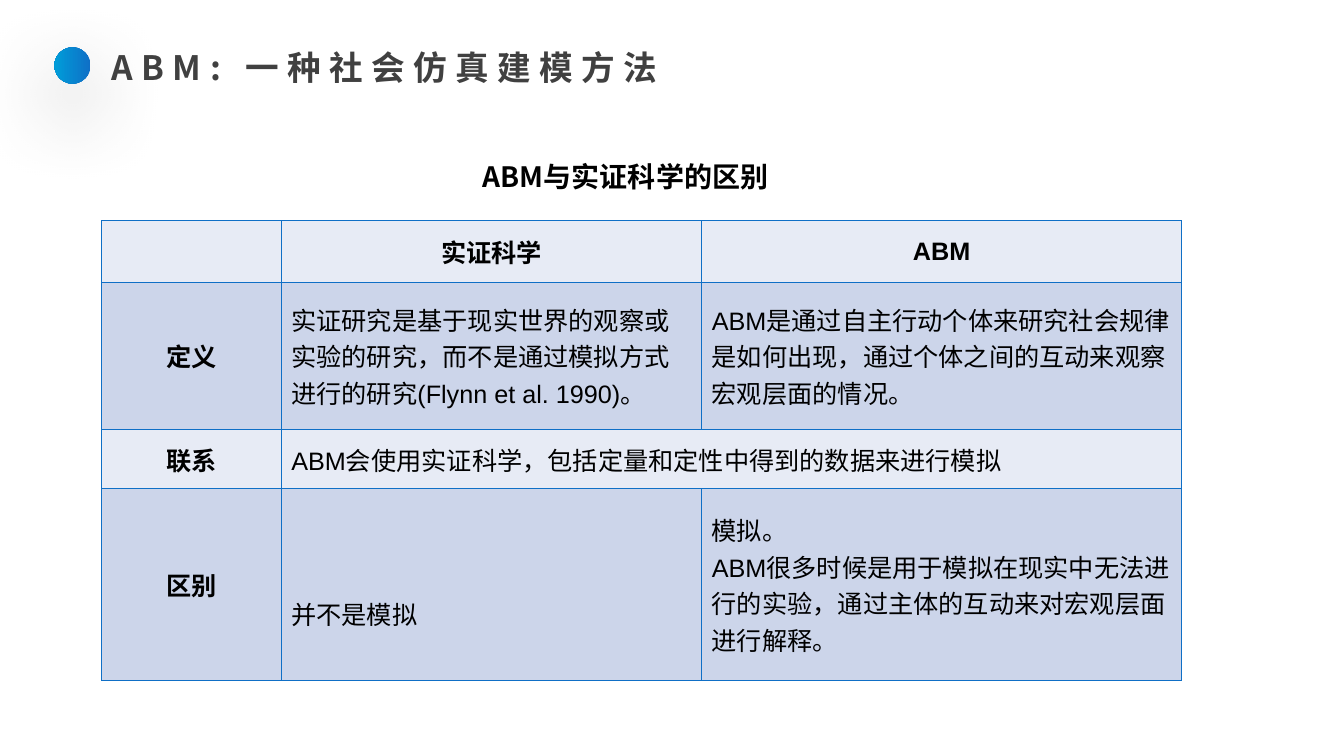
from dataclasses import dataclass
from lxml.etree import SubElement
from pptx import Presentation
from pptx.dml.color import RGBColor
from pptx.enum.shapes import MSO_SHAPE
from pptx.enum.text import MSO_ANCHOR, PP_ALIGN
from pptx.oxml.ns import qn
from pptx.util import Pt

PX = 9144  # EMU per px, 100 px to the inch


@dataclass(frozen=True)
class Theme:
    heading_font: str = "Noto Sans CJK SC"
    table_font: str = "Arial"
    title_size: int = 24
    caption_size: int = 20
    table_size: int = 18
    title: str = "404040"
    text: str = "000000"
    blue: str = "0F6FC6"
    cyan: str = "009DD9"
    bands: tuple = ("E7EBF5", "CCD5EA")


THEME = Theme()
COLUMNS = (178, 417, 476)
ROWS = (61, 146, 59, 190)
CELLS = (
    ("", "实证科学", "ABM"),
    ("定义",
     "实证研究是基于现实世界的观察或实验的研究，而不是通过模拟方式进行的研究(Flynn et al. 1990)。",
     "ABM是通过自主行动个体来研究社会规律是如何出现，通过个体之间的互动来观察宏观层面的情况。"),
    ("联系", "ABM会使用实证科学，包括定量和定性中得到的数据来进行模拟", ""),
    ("区别", "并不是模拟",
     "模拟。\nABM很多时候是用于模拟在现实中无法进行的实验，通过主体的互动来对宏观层面进行解释。"),
)


def emu(*lengths):
    return [length * PX for length in lengths]


def add_span(para, text, font, size, color, bold=True):
    span = para.add_run()
    span.text = text
    for name, value in {"name": font, "size": Pt(size), "bold": bold}.items():
        setattr(span.font, name, value)
    span.font.color.rgb = RGBColor.from_string(color)
    SubElement(span.font._element, qn("a:ea"), typeface=THEME.heading_font)
    return span


def add_heading(page, box, text, size, color, align=PP_ALIGN.LEFT, spacing=0):
    """Add a one-line heading; spacing is the letter spacing in points."""
    frame = page.shapes.add_textbox(*emu(*box)).text_frame
    frame.word_wrap = True
    para = frame.paragraphs[0]
    para.alignment = align
    span = add_span(para, text, THEME.heading_font, size, color)
    if spacing:
        span.font._element.set("spc", str(spacing * 100))


def add_bullet_dot(page, box):
    dot = page.shapes.add_shape(MSO_SHAPE.OVAL, *emu(*box))
    dot.line.fill.background()
    dot.fill.gradient()
    dot.fill.gradient_angle = 180
    for stop, color in zip(dot.fill.gradient_stops, (THEME.blue, THEME.cyan)):
        stop.color.rgb = RGBColor.from_string(color)
    dot.shadow.inherit = False
    effects = dot._element.spPr.find(qn("a:effectLst"))
    shadow = SubElement(effects, qn("a:outerShdw"), blurRad=str(Pt(60)),
                        dist=str(Pt(20)), dir="5400000", algn="t", rotWithShape="0")
    color = SubElement(shadow, qn("a:srgbClr"), val=THEME.text)
    SubElement(color, qn("a:alpha"), val="40000")


def add_title(page, box):
    left, top, width, height = box
    add_bullet_dot(page, (left, top + 5, 36, 36))
    add_heading(page, (left + 47, top, width - 47, height), "ABM: 一种社会仿真建模方法",
                THEME.title_size, THEME.title, PP_ALIGN.JUSTIFY, spacing=6)


def style_cell(cell, fill):
    properties = cell._tc.get_or_add_tcPr()
    for side in ("lnL", "lnR", "lnT", "lnB"):
        line = SubElement(properties, qn(f"a:{side}"), w=str(Pt(1)))
        paint = SubElement(line, qn("a:solidFill"))
        SubElement(paint, qn("a:srgbClr"), val=THEME.blue)
    cell.fill.solid()
    cell.fill.fore_color.rgb = RGBColor.from_string(fill)
    cell.vertical_anchor = MSO_ANCHOR.MIDDLE


def fill_cell(cell, text, is_header):
    for index, line in enumerate(text.split("\n")):
        frame = cell.text_frame
        para = frame.add_paragraph() if index else frame.paragraphs[0]
        para.alignment = PP_ALIGN.CENTER if is_header else PP_ALIGN.LEFT
        if line:
            add_span(para, line, THEME.table_font, THEME.table_size, THEME.text, is_header)


def add_comparison(page, box):
    table = page.shapes.add_table(len(ROWS), len(COLUMNS), *emu(*box)).table
    table.first_row = table.horz_banding = False
    for column, width in zip(table.columns, emu(*COLUMNS)):
        column.width = width
    for row, height in zip(table.rows, emu(*ROWS)):
        row.height = height
    for r, texts in enumerate(CELLS):
        for c, text in enumerate(texts):
            cell = table.cell(r, c)
            style_cell(cell, THEME.bands[r % 2])
            fill_cell(cell, text, is_header=r == 0 or c == 0)
    table.cell(2, 1).merge(table.cell(2, 2))
    table.cell(3, 1).margin_top = 62 * PX


def main():
    deck = Presentation()
    deck.slide_width, deck.slide_height = emu(1333, 750)
    page = deck.slides.add_slide(deck.slide_layouts[6])
    add_comparison(page, (101, 219, sum(COLUMNS), sum(ROWS)))
    add_title(page, (54, 42, 646, 50))
    add_heading(page, (469, 153, 365, 50), "ABM与实证科学的区别",
                THEME.caption_size, THEME.text)
    deck.save("out.pptx")


if __name__ == "__main__":
    main()
